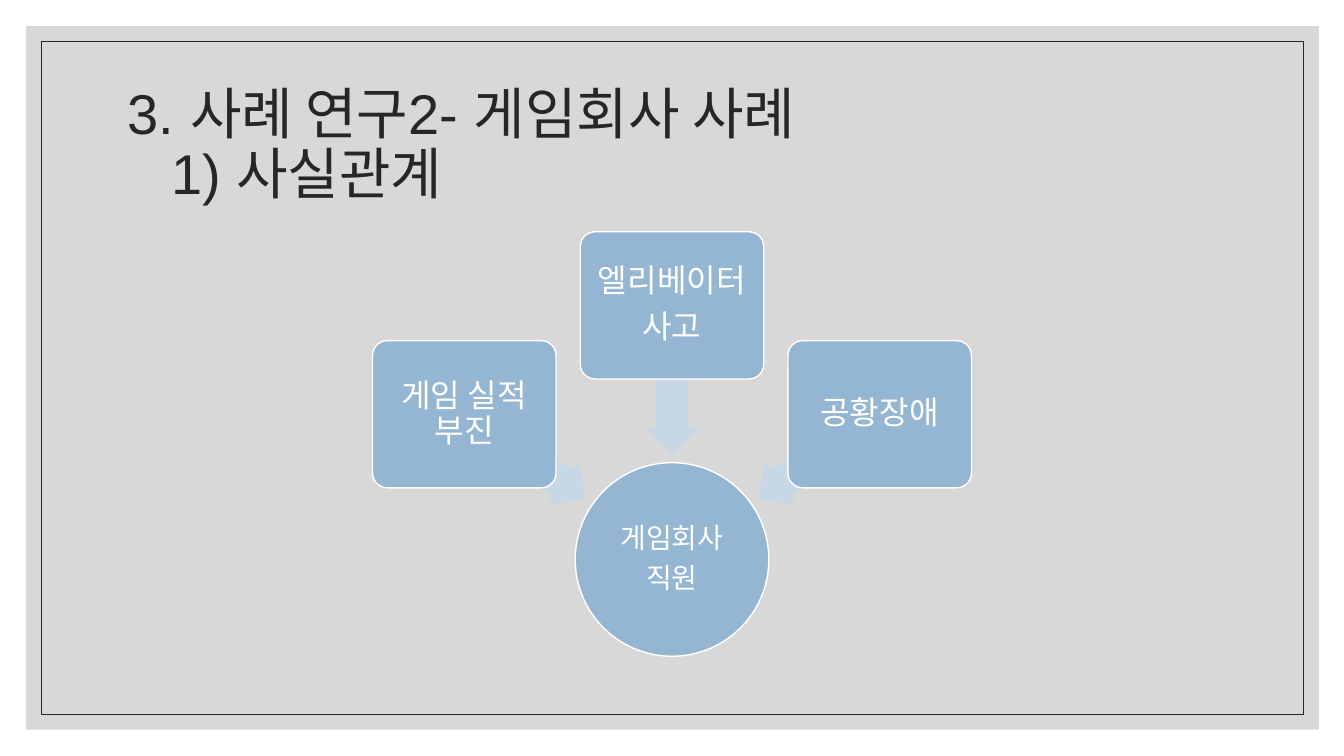
"""Build the case study slide with three causes leading to one employee."""
from lxml import etree
from pptx import Presentation
from pptx.dml.color import RGBColor
from pptx.enum.shapes import MSO_SHAPE
from pptx.enum.text import MSO_ANCHOR, PP_ALIGN
from pptx.oxml.ns import qn
from pptx.util import Inches, Pt

RECT, ROUNDED = MSO_SHAPE.RECTANGLE, MSO_SHAPE.ROUNDED_RECTANGLE
OVAL, LEFT_ARROW = MSO_SHAPE.OVAL, MSO_SHAPE.LEFT_ARROW
MIDDLE = MSO_ANCHOR.MIDDLE
LEFT, CENTER = PP_ALIGN.LEFT, PP_ALIGN.CENTER

WHITE = RGBColor(0xFF, 0xFF, 0xFF)
GRAY = RGBColor(0xBF, 0xBF, 0xBF)
DARK = RGBColor(0x26, 0x26, 0x26)
BLUE = RGBColor(0x94, 0xB6, 0xD2)
PALE_BLUE = RGBColor(0xC8, 0xD7, 0xE5)

SLIDE_WIDTH = 13.33
CENTER_X = SLIDE_WIDTH / 2


class CaseSlide:
    """Hold the slide and its text style, with one method per element."""

    title_font, body_font = "Arial", "Roboto"
    line_spacing = 0.9

    def __init__(self, deck):
        self.slide = deck.slides.add_slide(deck.slide_layouts[6])

    def shape(self, kind, box, fill=None, line=None, width=1, adjust=(), alpha=None):
        item = self.slide.shapes.add_shape(kind, *map(Inches, box))
        item.shadow.inherit = False
        for index, value in enumerate(adjust):
            item.adjustments[index] = value
        if fill is None:
            item.fill.background()
        else:
            item.fill.solid()
            item.fill.fore_color.rgb = fill
        if alpha is not None:
            color = item._element.spPr.find(qn("a:solidFill"))[0]
            etree.SubElement(color, qn("a:alpha")).set("val", str(alpha * 1000))
        if line is None:
            item.line.fill.background()
        else:
            item.line.color.rgb = line
            item.line.width = Pt(width)
        return item

    def set_text(self, item, lines, size, color, font, align, inset, after=0):
        frame = item.text_frame
        frame_format = {
            "word_wrap": True,
            "vertical_anchor": MIDDLE,
            **{f"margin_{side}": Inches(inset) for side in ("left", "top", "right", "bottom")},
        }
        for name, value in frame_format.items():
            setattr(frame, name, value)
        frame.text = "\n".join(lines)
        paragraph_format = {
            "alignment": align,
            "line_spacing": self.line_spacing,
            "space_after": Pt(after),
        }
        for paragraph in frame.paragraphs:
            for name, value in paragraph_format.items():
                setattr(paragraph, name, value)
            for name, value in {"size": Pt(size), "name": font}.items():
                setattr(paragraph.font, name, value)
            paragraph.font.color.rgb = color
        return frame

    def title(self, box, lines, indent):
        heading = self.slide.shapes.add_textbox(*map(Inches, box))
        frame = self.set_text(heading, lines, 40, DARK, self.title_font, LEFT, 0.1)
        subheading = frame.paragraphs[-1]._p.get_or_add_pPr()
        subheading.set("marL", str(Inches(indent)))

    def node(self, kind, box, lines, size, inset, adjust=()):
        item = self.shape(kind, box, BLUE, WHITE, adjust=adjust)
        self.set_text(item, lines, size, WHITE, self.body_font, CENTER, inset, size * 0.35)

    def arrow(self, center_x, center_y, rotation):
        width, height = 1.47, 0.55
        box = (center_x - width / 2, center_y - height / 2, width, height)
        item = self.shape(LEFT_ARROW, box, PALE_BLUE, adjust=(0.6, 0.5))
        item.rotation = rotation


def main():
    deck = Presentation()
    deck.slide_width, deck.slide_height = Inches(SLIDE_WIDTH), Inches(7.5)
    case = CaseSlide(deck)
    case.shape(RECT, (0.26, 0.26, 12.82, 6.98), GRAY, alpha=60)
    case.shape(RECT, (0.41, 0.41, 12.52, 6.68), line=DARK, width=0.5)
    case.title((1.17, 0.7, 11, 1.5), ["3. 사례 연구2- 게임회사 사례", "1) 사실관계"], 0.43)

    diameter = 1.92
    employee_box = (CENTER_X - diameter / 2, 4.59, diameter, diameter)
    case.node(OVAL, employee_box, ["게임회사", "직원"], 20, 0.01)

    causes = [
        (-1, 3.38, 4.53, ["게임 실적 부진"]),
        (0, 2.3, 3.77, ["엘리베이터", "사고"]),
        (1, 3.38, 4.53, ["공황장애"]),
    ]
    width, height = 1.82, 1.46
    for side, top, arrow_y, lines in causes:
        case.arrow(CENTER_X + 1.46 * side, arrow_y, 270 + 55 * side)
        cause_box = (CENTER_X + 2.06 * side - width / 2, top, width, height)
        case.node(ROUNDED, cause_box, lines, 23, 0.09, (0.1,))

    deck.save("out.pptx")


if __name__ == "__main__":
    main()
